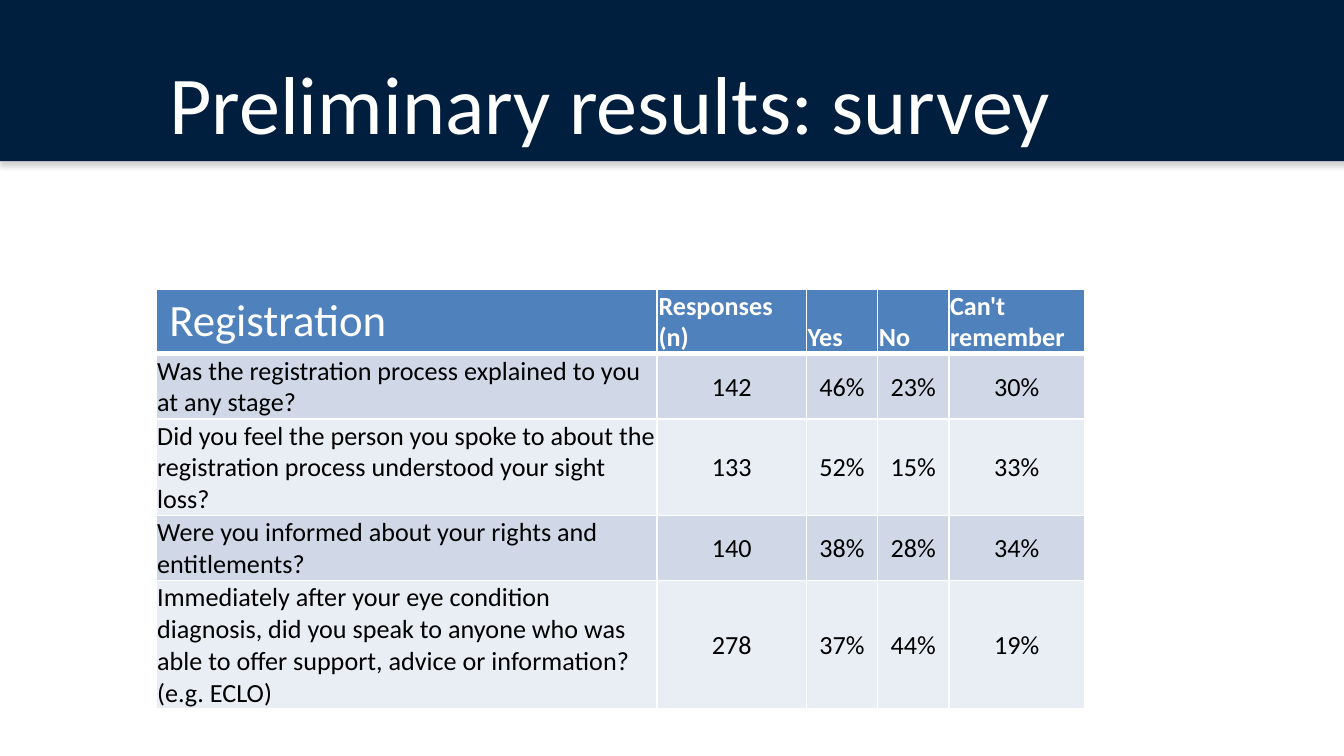
from dataclasses import dataclass

from lxml import etree
from pptx import Presentation
from pptx.dml.color import RGBColor
from pptx.enum import shapes, text
from pptx.oxml import ns
from pptx.util import Inches, Pt

FONT = "Calibri"
WHITE, BLACK, NAVY, HEADER_BLUE = "FFFFFF", "000000", "001E3D", "4F81BD"
BANDS = ("D0D8E8", "E9EDF4")
HEADINGS = ("", "Responses (n)", "Yes", "No", "Can't remember")
COLUMN_WIDTHS = (3.73, 1.11, 0.53, 0.53, 1.01)
ROW_HEIGHTS = (0.41, 0.41, 0.6, 0.41, 0.78)
LEFT = 1.16


@dataclass
class Question:
    wording: str
    responses: int
    yes: int
    no: int
    cant_remember: int

    def cells(self) -> list[str]:
        shares = (self.yes, self.no, self.cant_remember)
        return [self.wording, str(self.responses)] + [f"{share}%" for share in shares]


QUESTIONS = (
    Question("Was the registration process explained to you at any stage?", 142, 46, 23, 30),
    Question("Did you feel the person you spoke to about the registration process "
             "understood your sight loss?", 133, 52, 15, 33),
    Question("Were you informed about your rights and entitlements?", 140, 38, 28, 34),
    Question("Immediately after your eye condition diagnosis, did you speak to anyone who was "
             "able to offer support, advice or information? (e.g. ECLO)", 278, 37, 44, 19),
)


def rgb(color: str) -> RGBColor:
    return RGBColor.from_string(color)


def sub(parent, tag: str, **attributes):
    return etree.SubElement(parent, ns.qn(tag), {k: str(v) for k, v in attributes.items()})


def add_run(paragraph, wording: str, size: float, color: str, bold: bool = False) -> None:
    run = paragraph.add_run()
    run.text = wording
    run.font.name, run.font.size, run.font.bold = FONT, Pt(size), bold
    run.font.color.rgb = rgb(color)


def place(shape, left: float, top: float, width: float, height: float) -> None:
    shape.left, shape.top = Inches(left), Inches(top)
    shape.width, shape.height = Inches(width), Inches(height)


def add_banner(slide) -> None:
    banner = slide.shapes.add_shape(shapes.MSO_SHAPE.RECTANGLE, Inches(-0.01), Inches(-0.01),
                                    Inches(10.03), Inches(1.21))
    banner.fill.solid()
    banner.fill.fore_color.rgb = rgb(NAVY)
    banner.line.fill.background()
    banner.shadow.inherit = False
    effects = banner._element.spPr.find(ns.qn("a:effectLst"))
    shadow = sub(effects, "a:outerShdw", blurRad=Pt(3.1), dist=Pt(1.8), dir=90 * 60000,
                 rotWithShape=0)
    sub(sub(shadow, "a:srgbClr", val="808080"), "a:alpha", val=35000)


def style_cell(cell, fill: str, bottom_border: float) -> None:
    properties = cell._tc.get_or_add_tcPr()
    for side, width in (("L", 1), ("R", 1), ("T", 1), ("B", bottom_border)):
        border = sub(properties, f"a:ln{side}", w=Pt(width))
        sub(sub(border, "a:solidFill"), "a:srgbClr", val=WHITE)
    cell.fill.solid()
    cell.fill.fore_color.rgb = rgb(fill)


def fill_cell(cell, wording: str, color: str, bold: bool, centred: bool) -> None:
    cell.margin_left = cell.margin_right = cell.margin_top = Inches(0.01)
    cell.margin_bottom = 0
    cell.vertical_anchor = text.MSO_ANCHOR.MIDDLE if centred else text.MSO_ANCHOR.BOTTOM
    paragraph = cell.text_frame.paragraphs[0]
    if centred:
        paragraph.alignment = text.PP_ALIGN.CENTER
    add_run(paragraph, wording, 14, color, bold)


def add_results(slide) -> None:
    rows = [HEADINGS] + [question.cells() for question in QUESTIONS]
    results = slide.shapes.add_table(len(rows), len(HEADINGS), Inches(LEFT), Inches(2.15),
                                     Inches(sum(COLUMN_WIDTHS)), Inches(sum(ROW_HEIGHTS))).table
    for column, width in zip(results.columns, COLUMN_WIDTHS):
        column.width = Inches(width)
    for r, wordings in enumerate(rows):
        results.rows[r].height = Inches(ROW_HEIGHTS[r])
        heading = r == 0
        for c, wording in enumerate(wordings):
            cell = results.cell(r, c)
            style_cell(cell, HEADER_BLUE if heading else BANDS[(r - 1) % 2], 3 if heading else 1)
            if wording:
                fill_cell(cell, wording, WHITE if heading else BLACK, heading,
                          centred=not heading and c > 0)


def write_title(title) -> None:
    place(title, LEFT, 0.23, 8.34, 0.94)
    title.text_frame.vertical_anchor = text.MSO_ANCHOR.BOTTOM
    paragraph = title.text_frame.paragraphs[0]
    paragraph.alignment = text.PP_ALIGN.LEFT
    add_run(paragraph, "Preliminary results: survey", 44, WHITE)


def write_topic(topic) -> None:
    place(topic, LEFT, 2.12, 3.29, 3.38)
    paragraph = topic.text_frame.paragraphs[0]
    properties = paragraph._p.get_or_add_pPr()
    properties.set("marL", "0")
    properties.set("indent", "0")
    sub(properties, "a:buNone")
    paragraph.space_before = Pt(0)
    add_run(paragraph, "Registration", 24, WHITE)


def main() -> None:
    deck = Presentation()
    deck.slide_width = Inches(10)
    deck.slide_height = deck.slide_width * 9 // 16
    slide = deck.slides.add_slide(deck.slide_layouts[1])
    title, topic = slide.placeholders
    add_banner(slide)
    add_results(slide)
    write_title(title)
    write_topic(topic)
    for placeholder in (title, topic):  # bring in front of banner and table
        slide.shapes._spTree.append(placeholder._element)
    deck.save("out.pptx")


if __name__ == "__main__":
    main()
